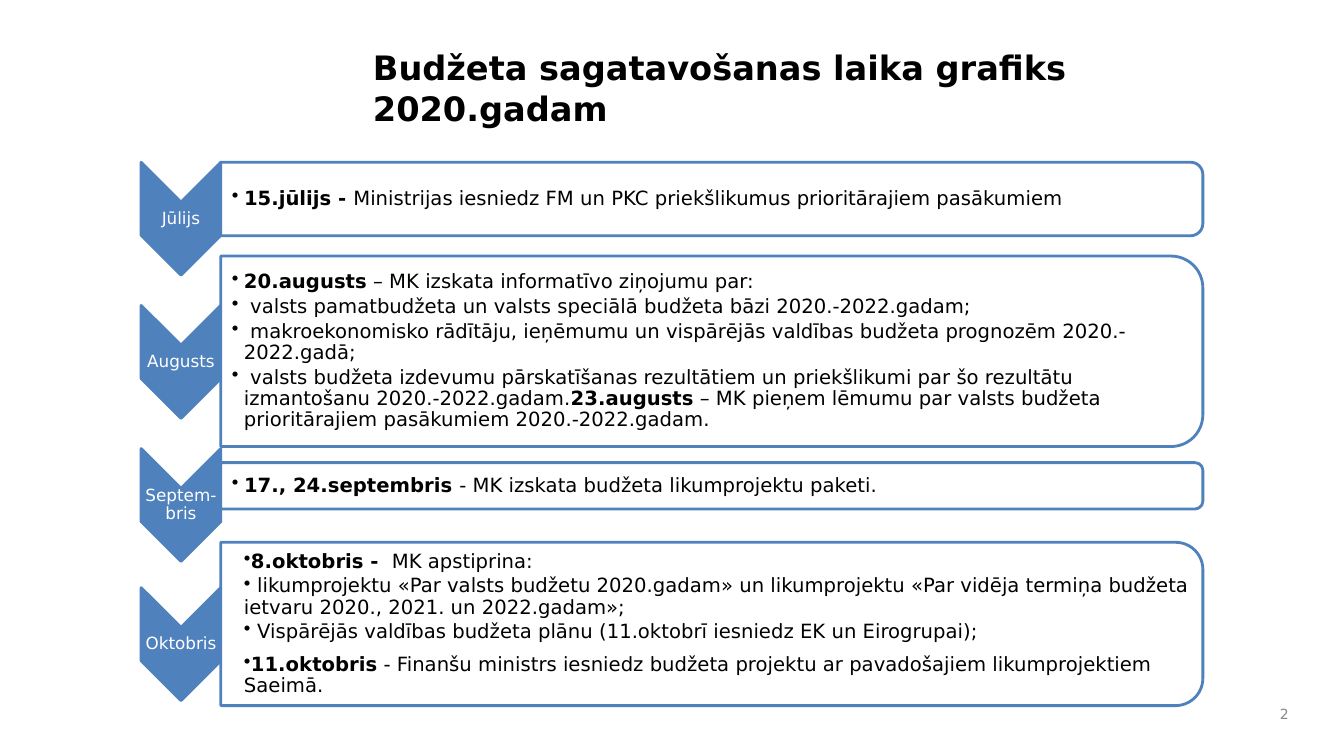
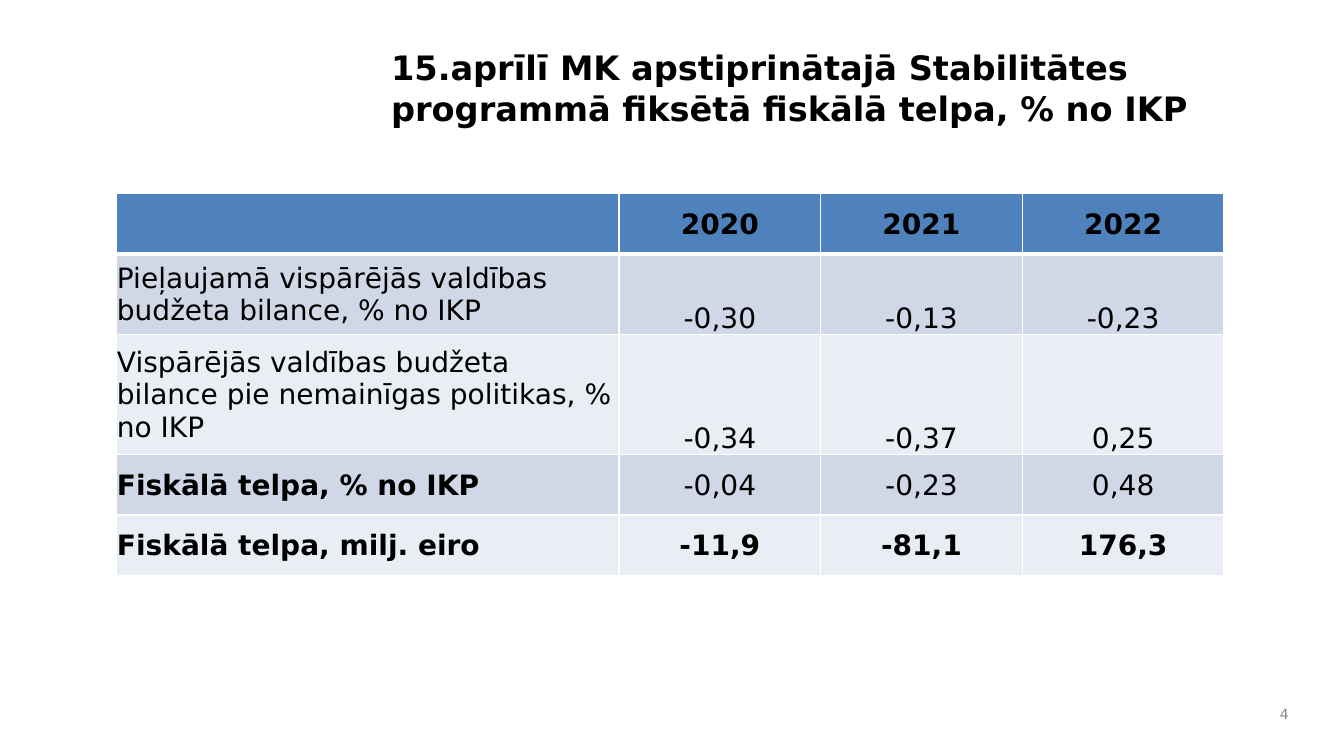
from pptx import Presentation
from pptx import util as u
from pptx.dml.color import RGBColor
from pptx.enum import shapes, text
from pptx.oxml import parse_xml
from pptx.oxml.ns import nsdecls

BLUE, PALE, LIGHT = "4F81BD", "D0D8E8", "E9EDF4"
WHITE, BLACK, GREY = "FFFFFF", "000000", "898989"
FONT = "DejaVu Sans"
LEFT, MID, RIGHT = text.PP_ALIGN.LEFT, text.PP_ALIGN.CENTER, text.PP_ALIGN.RIGHT
TOP, CENTER, BOTTOM = (text.MSO_ANCHOR.TOP, text.MSO_ANCHOR.MIDDLE,
                       text.MSO_ANCHOR.BOTTOM)


def color(code):
    return RGBColor.from_string(code)


def write(frame, lines, size=14, ink=BLACK, align=LEFT, anchor=CENTER,
          pad=(0.1, 0.05, 0.1, 0.05), space=None, after=0, wide=None,
          hang=None):
    """Fill a frame; parts between asterisks are bold."""
    frame.word_wrap = True
    frame.vertical_anchor = anchor
    (frame.margin_left, frame.margin_top,
     frame.margin_right, frame.margin_bottom) = map(u.Inches, pad)
    lines = [lines] if isinstance(lines, str) else lines
    for i, line in enumerate(lines):
        para = frame.paragraphs[0] if i == 0 else frame.add_paragraph()
        if hang is not None:
            props = para._p.get_or_add_pPr()
            props.set("marL", str(u.Inches(0.12)))
            props.set("indent", str(u.Inches(hang)))
            props.append(parse_xml(f'<a:buChar {nsdecls("a")} char="•"/>'))
        para.alignment = align
        para.line_spacing = space
        if i < len(lines) - 1:
            para.space_after = u.Pt(8 if i == wide else after)
        for j, part in enumerate(line.split("*")):
            if part:
                run = para.add_run()
                run.text = part
                font = run.font
                font.name, font.size, font.bold = FONT, u.Pt(size), j % 2 == 1
                font.color.rgb = color(ink)


class Deck:
    def __init__(self):
        self.file = Presentation()
        self.file.slide_width = u.Inches(13.33)
        self.file.slide_height = u.Inches(7.5)
        self.slide = None

    def page(self, title, number, box):
        """Start a slide with its title and page number."""
        self.slide = self.file.slides.add_slide(self.file.slide_layouts[6])
        self.label(box, f"*{title}*", size=24, anchor=TOP)
        self.label((12.27, 6.92, 0.61, 0.33), number,
                   size=10, ink=GREY, align=RIGHT)

    def label(self, box, lines, **form):
        item = self.slide.shapes.add_textbox(*map(u.Inches, box))
        write(item.text_frame, lines, **form)

    def turned(self, kind, box, fill):
        """Draw a shape turned by 90 degrees so that it covers the box."""
        x, y, w, h = box
        frame = (x + (w - h) / 2, y + (h - w) / 2, h, w)
        item = self.slide.shapes.add_shape(kind, *map(u.Inches, frame))
        item.rotation = 90
        item.shadow.inherit = False
        item.fill.solid()
        item.fill.fore_color.rgb = color(fill)
        item.line.color.rgb = color(BLUE)
        item.line.width = u.Pt(2)

    def month(self, y, name):
        x, w, h = 1.4, 0.79, 1.12
        self.turned(shapes.MSO_SHAPE.CHEVRON, (x, y, w, h), BLUE)
        self.label((x, y + w / 2, w, h - w), name, size=12, ink=WHITE,
                   align=MID, space=0.9, pad=(0.01,) * 4)

    def panel(self, y, h, lines, **form):
        x, w = 2.19, 9.74
        self.turned(shapes.MSO_SHAPE.ROUND_2_SAME_RECTANGLE,
                    (x, y, w, h), WHITE)
        edge = 0.05 * h  # keeps the text clear of the round corners
        self.label((x, y + edge, w - edge, h - 2 * edge), lines,
                   space=0.9, after=2.5, pad=(0.11, 0.01, 0.01, 0.01), **form)

    def border(self, cell, base):
        props = cell._tc.get_or_add_tcPr()
        for side, width in zip("LRTB", (1, 1, 1, base)):
            props.append(parse_xml(
                f'<a:ln{side} {nsdecls("a")} w="{u.Pt(width)}"><a:solidFill>'
                f'<a:srgbClr val="{WHITE}"/></a:solidFill></a:ln{side}>'))

    def table(self, box, cols, heights, rows, low):
        """Draw a table; figures in the low rows sit at the cell bottom."""
        grid = self.slide.shapes.add_table(
            len(rows), len(cols), *map(u.Inches, box)).table
        for col, w in zip(grid.columns, cols):
            col.width = u.Inches(w)
        for r, row in enumerate(rows):
            grid.rows[r].height = u.Inches(heights[r])
            for c, words in enumerate(row):
                cell = grid.cell(r, c)
                self.border(cell, 1 if r else 3)
                cell.fill.solid()
                cell.fill.fore_color.rgb = color(
                    (PALE if r % 2 else LIGHT) if r else BLUE)
                anchor = BOTTOM if c and r in low else CENTER
                write(cell.text_frame, words, size=20,
                      align=MID if c else LEFT)
                cell.vertical_anchor = anchor
                cell.margin_left = cell.margin_right = u.Inches(0.01)
                cell.margin_top, cell.margin_bottom = u.Inches(0.01), 0


def main():
    deck = Deck()

    # Timeline: month, its top, panel top and height, lines, format
    deck.page("Budžeta sagatavošanas laika grafiks 2020.gadam", "2",
              (3.6, 0.42, 7.45, 0.86))
    steps = [
        ("Jūlijs", 1.61, 1.61, 0.73, [
            "*15.jūlijs - *Ministrijas iesniedz FM un PKC priekšlikumus "
            "prioritārajiem pasākumiem"], {"hang": -0.12}),
        ("Augusts", 3.03, 2.54, 1.89, [
            "*20.augusts* – MK izskata informatīvo ziņojumu par:",
            " valsts pamatbudžeta un valsts speciālā budžeta bāzi "
            "2020.-2022.gadam;",
            " makroekonomisko rādītāju, ieņēmumu un vispārējās valdības "
            "budžeta prognozēm 2020.-2022.gadā;",
            " valsts budžeta izdevumu pārskatīšanas rezultātiem un "
            "priekšlikumi par šo rezultātu izmantošanu 2020.-2022.gadam."
            "*23.augusts* – MK pieņem lēmumu par valsts budžeta "
            "prioritārajiem pasākumiem 2020.-2022.gadam."], {"hang": -0.12}),
        ("Septem-bris", 4.45, 4.59, 0.46, [
            "*17., 24.septembris *- MK izskata budžeta likumprojektu "
            "paketi."], {"hang": -0.12}),
        ("Oktobris", 5.83, 5.38, 1.62, [
            "*8.oktobris - * MK apstiprina:",
            " likumprojektu «Par valsts budžetu 2020.gadam» un "
            "likumprojektu «Par vidēja termiņa budžeta ietvaru 2020., "
            "2021. un 2022.gadam»;",
            " Vispārējās valdības budžeta plānu (11.oktobrī iesniedz EK un "
            "Eirogrupai);",
            "*11.oktobris* - Finanšu ministrs iesniedz budžeta projektu ar "
            "pavadošajiem likumprojektiem Saeimā."], {"hang": 0, "wide": 2}),
    ]
    for name, y, top, h, lines, form in steps:
        deck.month(y, name)
        deck.panel(top, h, lines, **form)

    # Fiscal space table
    deck.page("15.aprīlī MK apstiprinātajā Stabilitātes programmā fiksētā "
              "fiskālā telpa, % no IKP", "4", (3.78, 0.42, 8.89, 1.13))
    rows = [
        ("", "*2020*", "*2021*", "*2022*"),
        ("Pieļaujamā vispārējās valdības budžeta bilance, % no IKP",
         "-0,30", "-0,13", "-0,23"),
        ("Vispārējās valdības budžeta bilance pie nemainīgas politikas, "
         "% no IKP", "-0,34", "-0,37", "0,25"),
        ("*Fiskālā telpa, % no IKP*", "-0,04", "-0,23", "0,48"),
        ("*Fiskālā telpa, milj. eiro*", "*-11,9*", "*-81,1*", "*176,3*"),
    ]
    deck.table((1.15, 1.92, 10.98, 3.77), (4.99, 2, 2, 2),
               (0.6, 0.8, 1.19, 0.6, 0.6), rows, low=(1, 2))

    deck.file.save("out.pptx")


if __name__ == "__main__":
    main()
